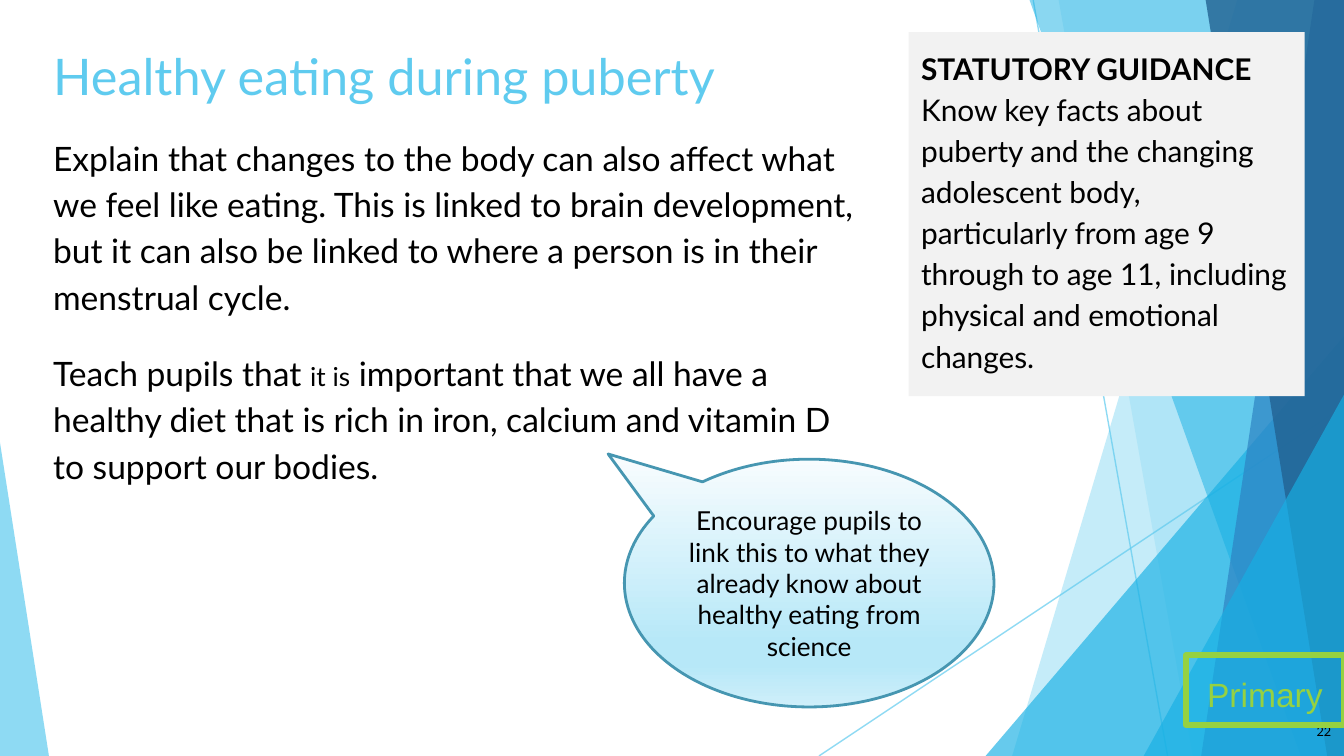
from lxml import etree
from pptx import Presentation
from pptx.dml.color import RGBColor
from pptx.enum.shapes import MSO_CONNECTOR, MSO_SHAPE
from pptx.enum.text import MSO_ANCHOR, MSO_AUTO_SIZE, PP_ALIGN
from pptx.oxml.ns import qn
from pptx.util import Pt

PX = 9525  # 96 px to the inch
WIDTH, HEIGHT = 960, 540
INSET = 9

STRAIGHT = MSO_CONNECTOR.STRAIGHT
RECTANGLE = MSO_SHAPE.RECTANGLE
TRIANGLE = MSO_SHAPE.ISOSCELES_TRIANGLE
CALLOUT = MSO_SHAPE.OVAL_CALLOUT
TOP, MIDDLE = MSO_ANCHOR.TOP, MSO_ANCHOR.MIDDLE
LEFT, CENTER, RIGHT = PP_ALIGN.LEFT, PP_ALIGN.CENTER, PP_ALIGN.RIGHT
NO_AUTOFIT = MSO_AUTO_SIZE.NONE

BLACK = RGBColor(0x00, 0x00, 0x00)
SKY = RGBColor(0x5F, 0xCB, 0xEF)
CYAN = RGBColor(0x17, 0xB0, 0xE4)
BLUE = RGBColor(0x2E, 0x83, 0xC3)
NAVY = RGBColor(0x22, 0x62, 0x92)
PALE_GREY = RGBColor(0xF2, 0xF2, 0xF2)
GREEN = RGBColor(0x96, 0xD1, 0x41)
TEAL = RGBColor(0x46, 0x96, 0xB1)
BUBBLE_STOPS = [
    (0, RGBColor(0xF7, 0xFC, 0xFE)),
    (74, RGBColor(0xB7, 0xE8, 0xF8)),
    (83, RGBColor(0xB7, 0xE8, 0xF8)),
    (100, RGBColor(0xCF, 0xEF, 0xFA)),
]


def emu(*lengths):
    return [length * PX for length in lengths]


def set_opacity(shape, percent):
    for color in shape.element.spPr.iter(qn("a:srgbClr")):
        etree.SubElement(color, qn("a:alpha"), val=str(percent * 1000))


def prepare_frame(shape, anchor=TOP, inset_x=INSET, inset_y=INSET):
    frame = shape.text_frame
    frame.word_wrap = True
    frame.auto_size = NO_AUTOFIT
    frame.vertical_anchor = anchor
    frame.margin_left = frame.margin_right = inset_x * PX
    frame.margin_top = frame.margin_bottom = inset_y * PX
    return frame


def format_paragraph(paragraph, size, color=BLACK, font="Lato", align=LEFT, spacing=1.0):
    paragraph.alignment = align
    paragraph.line_spacing = spacing
    for run in paragraph.runs:
        run.font.name = font
        run.font.size = Pt(size)
        run.font.color.rgb = color


def add_facet(slide, color, opacity, top_x, bottom_x):
    """Fill the slide to the right of a slanted edge."""
    builder = slide.shapes.build_freeform(*emu(top_x, -1), scale=1.0)
    corners = [(WIDTH, -1), (WIDTH, HEIGHT), (bottom_x, HEIGHT)]
    builder.add_line_segments([emu(*corner) for corner in corners], close=True)
    finish_facet(builder.convert_to_shape(), color, opacity)


def add_triangle(slide, color, opacity, left, top, width, apex):
    """Stand a triangle on the bottom edge of the slide."""
    shape = slide.shapes.add_shape(TRIANGLE, *emu(left, top, width, HEIGHT - top))
    shape.adjustments[0] = apex
    finish_facet(shape, color, opacity)


def finish_facet(shape, color, opacity):
    shape.shadow.inherit = False
    shape.fill.solid()
    shape.fill.fore_color.rgb = color
    shape.line.fill.background()
    set_opacity(shape, opacity)


def add_backdrop(slide):
    for ends in [(738, 0, 834, HEIGHT), (WIDTH, 290, 585, HEIGHT)]:
        line = slide.shapes.add_connector(STRAIGHT, *emu(*ends))
        line.line.color.rgb = SKY
        line.line.width = Pt(0.75)
        set_opacity(line, 70)
        etree.SubElement(line.element.spPr, qn("a:effectLst"))
    add_facet(slide, SKY, 36, 884, 723)
    add_facet(slide, SKY, 20, 756, 852)
    add_triangle(slide, CYAN, 66, 704, 240, 256, 1)
    add_facet(slide, CYAN, 50, 735, 929)
    add_facet(slide, BLUE, 70, 939, 858)
    add_facet(slide, NAVY, 80, 861, 948)
    add_triangle(slide, CYAN, 66, 817, 282, 143, 1)
    add_triangle(slide, SKY, 70, 0, 316, 35, 0)


def place_title(slide, left, top, width, height):
    title = slide.shapes.title
    title.left, title.top, title.width, title.height = emu(left, top, width, height)
    frame = prepare_frame(title)
    frame.text = "Healthy eating during puberty"
    format_paragraph(frame.paragraphs[0], 27, SKY)


def add_body(slide, left, top, width, height):
    frame = prepare_frame(slide.shapes.add_textbox(*emu(left, top, width, height)))
    frame.text = (
        "Explain that changes to the body can also affect what we feel like eating. "
        "This is linked to brain development, but it can also be linked to where "
        "a person is in their menstrual cycle."
    )
    teaching = frame.add_paragraph()
    teaching.space_before = Pt(16)
    for text in ["Teach pupils that ", "it is",
                 " important that we all have a healthy diet that is rich in iron, "
                 "calcium and vitamin D "]:
        teaching.add_run().text = text
    teaching.add_line_break()
    teaching.add_run().text = "to support our bodies."
    for paragraph in frame.paragraphs:
        format_paragraph(paragraph, 18, spacing=1.15)
    teaching.runs[1].font.size = Pt(14)


def add_guidance(slide, left, top, width, height):
    panel = slide.shapes.add_shape(RECTANGLE, *emu(left, top, width, height))
    panel.shadow.inherit = False
    panel.fill.solid()
    panel.fill.fore_color.rgb = PALE_GREY
    panel.line.fill.background()
    paragraph = prepare_frame(panel).paragraphs[0]
    paragraph.text = (
        "STATUTORY GUIDANCE\v"
        "Know key facts about puberty and the changing adolescent body, particularly "
        "from age 9 through to age 11, including physical and emotional changes."
    )
    format_paragraph(paragraph, 16, spacing=1.15)
    paragraph.runs[0].font.bold = True
    for line_break in panel.element.iter(qn("a:br")):
        etree.SubElement(line_break, qn("a:rPr"), sz="1600")


def add_page_number(slide, left, top, width, height):
    box = slide.shapes.add_textbox(*emu(left, top, width, height))
    frame = prepare_frame(box, MIDDLE)
    frame.text = "22"
    format_paragraph(frame.paragraphs[0], 6.8, align=RIGHT)


def add_stage_label(slide, left, top, width, height):
    label = slide.shapes.add_shape(RECTANGLE, *emu(left, top, width, height))
    label.shadow.inherit = False
    label.fill.background()
    label.line.color.rgb = GREEN
    label.line.width = Pt(3)
    frame = prepare_frame(label)
    frame.text = "Primary"
    format_paragraph(frame.paragraphs[0], 18, GREEN, "Arial", CENTER, 1.15)


def add_bubble(slide, left, top, width, height):
    bubble = slide.shapes.add_shape(CALLOUT, *emu(left, top, width, height))
    bubble.shadow.inherit = False
    bubble.adjustments[0] = -0.544
    bubble.adjustments[1] = -0.521
    bubble.fill.gradient()
    bubble.fill.gradient_angle = 270
    stops = next(bubble.element.spPr.iter(qn("a:gsLst")))
    stops.clear()
    for percent, color in BUBBLE_STOPS:
        stop = etree.SubElement(stops, qn("a:gs"), pos=str(percent * 1000))
        etree.SubElement(stop, qn("a:srgbClr"), val=str(color))
    bubble.line.color.rgb = TEAL
    bubble.line.width = Pt(1.5)
    frame = prepare_frame(bubble, MIDDLE, 7, 4)
    frame.text = ("Encourage pupils to link this to what they already know "
                  "about healthy eating from science")
    format_paragraph(frame.paragraphs[0], 14, align=CENTER)


def main():
    presentation = Presentation()
    presentation.slide_width, presentation.slide_height = emu(WIDTH, HEIGHT)
    slide = presentation.slides.add_slide(presentation.slide_layouts[5])
    add_backdrop(slide)
    place_title(slide, 29, 23, 615, 60)
    add_body(slide, 29, 85, 607, 383)
    add_guidance(slide, 649, 23, 283, 260)
    add_page_number(slide, 923, 505, 37, 35)
    add_stage_label(slide, 847, 468, 113, 50)
    add_bubble(slide, 446, 328, 264, 177)
    presentation.save("out.pptx")


if __name__ == "__main__":
    main()
